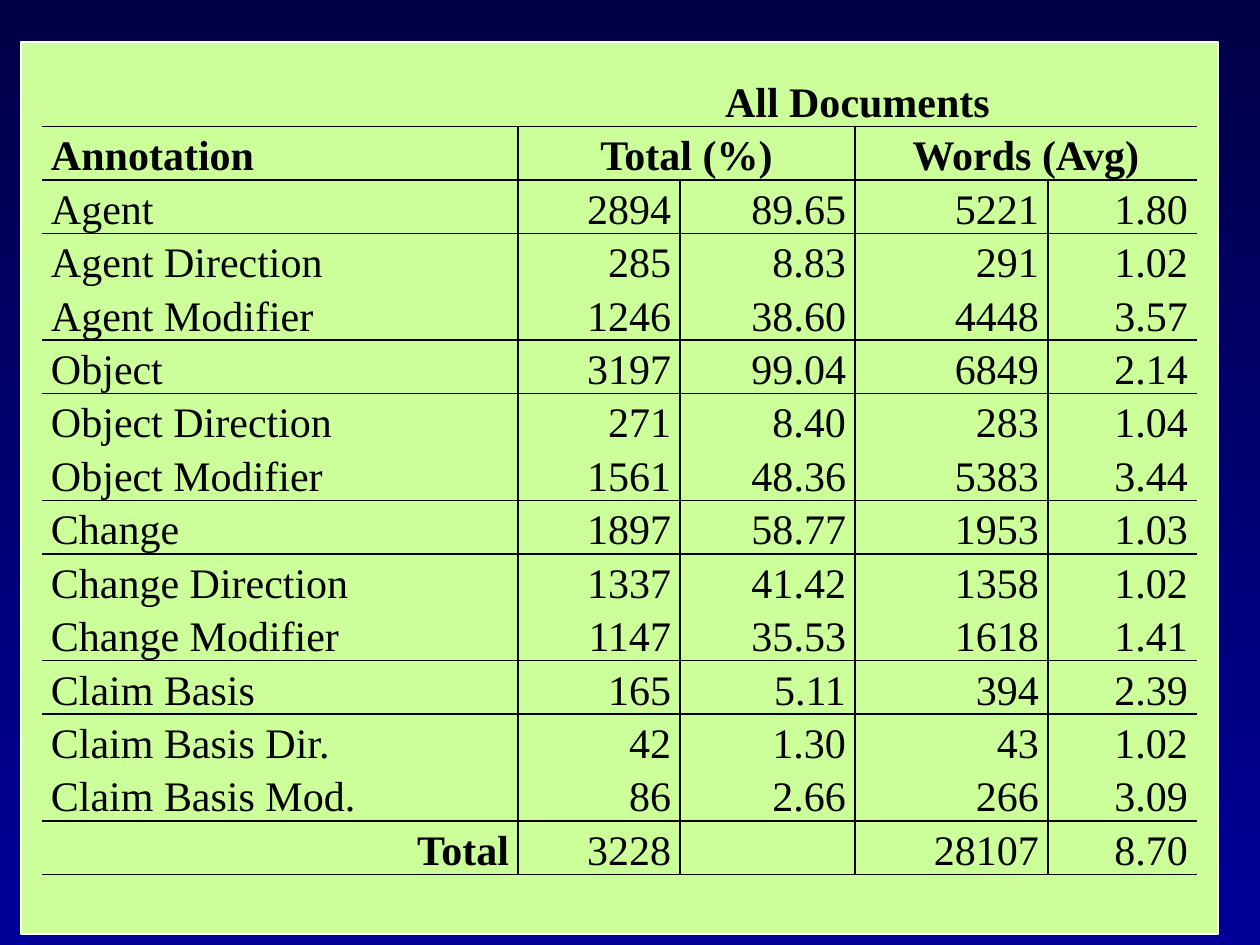
from pptx import Presentation
from pptx import util as u
from pptx.dml import color
from pptx.enum import shapes, text
from pptx.oxml import ns
from lxml import etree

PX = 914400 / 126
FONT = "Times New Roman"
NO_STYLE = "{2D5ABB26-0587-4C30-8999-92F81FD0307C}"
COLUMNS = [476, 162, 175, 193, 149]
HEADER_HEIGHT, ROW_HEIGHT = 49, 40
HEADER_ROWS = 2
RULED_ROWS = {0, 1, 4, 7, 10, 13, 14}
RULED_COLUMNS = {0, 2}
MERGES = [((0, 1), (0, 4)), ((1, 1), (1, 2)), ((1, 3), (1, 4))]
ROWS = [
    ["", "All Documents", "", "", ""],
    ["Annotation", "Total (%)", "", "Words (Avg)", ""],
    ["Agent", "2894", "89.65", "5221", "1.80"],
    ["Agent Direction", "285", "8.83", "291", "1.02"],
    ["Agent Modifier", "1246", "38.60", "4448", "3.57"],
    ["Object", "3197", "99.04", "6849", "2.14"],
    ["Object Direction", "271", "8.40", "283", "1.04"],
    ["Object Modifier", "1561", "48.36", "5383", "3.44"],
    ["Change", "1897", "58.77", "1953", "1.03"],
    ["Change Direction", "1337", "41.42", "1358", "1.02"],
    ["Change Modifier", "1147", "35.53", "1618", "1.41"],
    ["Claim Basis", "165", "5.11", "394", "2.39"],
    ["Claim Basis Dir.", "42", "1.30", "43", "1.02"],
    ["Claim Basis Mod.", "86", "2.66", "266", "3.09"],
    ["Total", "3228", "", "28107", "8.70"],
]
LAST_ROW, LAST_COLUMN = len(ROWS) - 1, len(COLUMNS) - 1


def px(length):
    return u.Emu(round(length * PX))


def rgb(value):
    return color.RGBColor.from_string(value)


def paint_background(page):
    fill = page.background.fill
    fill.gradient()
    fill.gradient_angle = 270
    for stop, value, position in zip(fill.gradient_stops, ("000047", "000099"), (0, 1)):
        stop.color.rgb = rgb(value)
        stop.position = position


def add_panel(page, box):
    panel = page.shapes.add_shape(shapes.MSO_SHAPE.RECTANGLE, *map(px, box))
    panel.shadow.inherit = False
    panel.fill.solid()
    panel.fill.fore_color.rgb = rgb("CCFF99")
    panel.line.color.rgb = rgb("FFFFFF")
    panel.line.width = u.Pt(1.5)


def rule_below(row, column):
    if row not in RULED_ROWS:
        return 0
    return 1.5 if row == LAST_ROW - 1 and column > 0 else 1


def rule_right(row, column):
    if row == 0:
        return int(column == LAST_COLUMN)
    return int(column in RULED_COLUMNS)


def draw_borders(cell, row, column):
    widths = {
        "a:lnL": rule_right(row, column - 1),
        "a:lnR": rule_right(row, column),
        "a:lnT": rule_below(row - 1, column),
        "a:lnB": rule_below(row, column),
    }
    properties = cell._tc.get_or_add_tcPr()
    for tag, width in widths.items():
        if width:
            line = etree.SubElement(properties, ns.qn(tag), w=str(u.Pt(width)))
            fill = etree.SubElement(line, ns.qn("a:solidFill"))
            etree.SubElement(fill, ns.qn("a:srgbClr"), val="000000")


def alignment(row, column):
    if column == 0 and row < LAST_ROW:
        return text.PP_ALIGN.LEFT
    return text.PP_ALIGN.CENTER if row < HEADER_ROWS else text.PP_ALIGN.RIGHT


def fill_cell(cell, row, column):
    draw_borders(cell, row, column)
    cell.fill.background()
    cell.margin_left = cell.margin_right = px(9)
    cell.margin_top = cell.margin_bottom = 0
    cell.vertical_anchor = text.MSO_ANCHOR.BOTTOM
    cell.text = ROWS[row][column]
    para = cell.text_frame.paragraphs[0]
    para.alignment = alignment(row, column)
    para.line_spacing = 1.15
    para.font.name = FONT
    para.font.size = u.Pt(24)
    para.font.bold = row < HEADER_ROWS or (row == LAST_ROW and column == 0)
    para.font.color.rgb = rgb("000000")


def add_annotation_table(page, box):
    frame = page.shapes.add_table(len(ROWS), len(COLUMNS), *map(px, box))
    table = frame.table
    table.first_row = table.horz_banding = False
    table._tbl.tblPr.find(ns.qn("a:tableStyleId")).text = NO_STYLE
    for column, width in zip(table.columns, COLUMNS):
        column.width = px(width)
    for index, row in enumerate(table.rows):
        row.height = px(ROW_HEIGHT if index else HEADER_HEIGHT)
        for column, cell in enumerate(row.cells):
            fill_cell(cell, index, column)
    for start, end in MERGES:
        table.cell(*start).merge(table.cell(*end))
    frame.height = px(box[3])


def main():
    deck = Presentation()
    deck.slide_width, deck.slide_height = px(1260), px(945)
    page = deck.slides.add_slide(deck.slide_layouts[6])
    paint_background(page)
    add_panel(page, (21, 42, 1197, 892))
    add_annotation_table(page, (42, 73, sum(COLUMNS), 869))
    deck.save("out.pptx")


if __name__ == "__main__":
    main()
